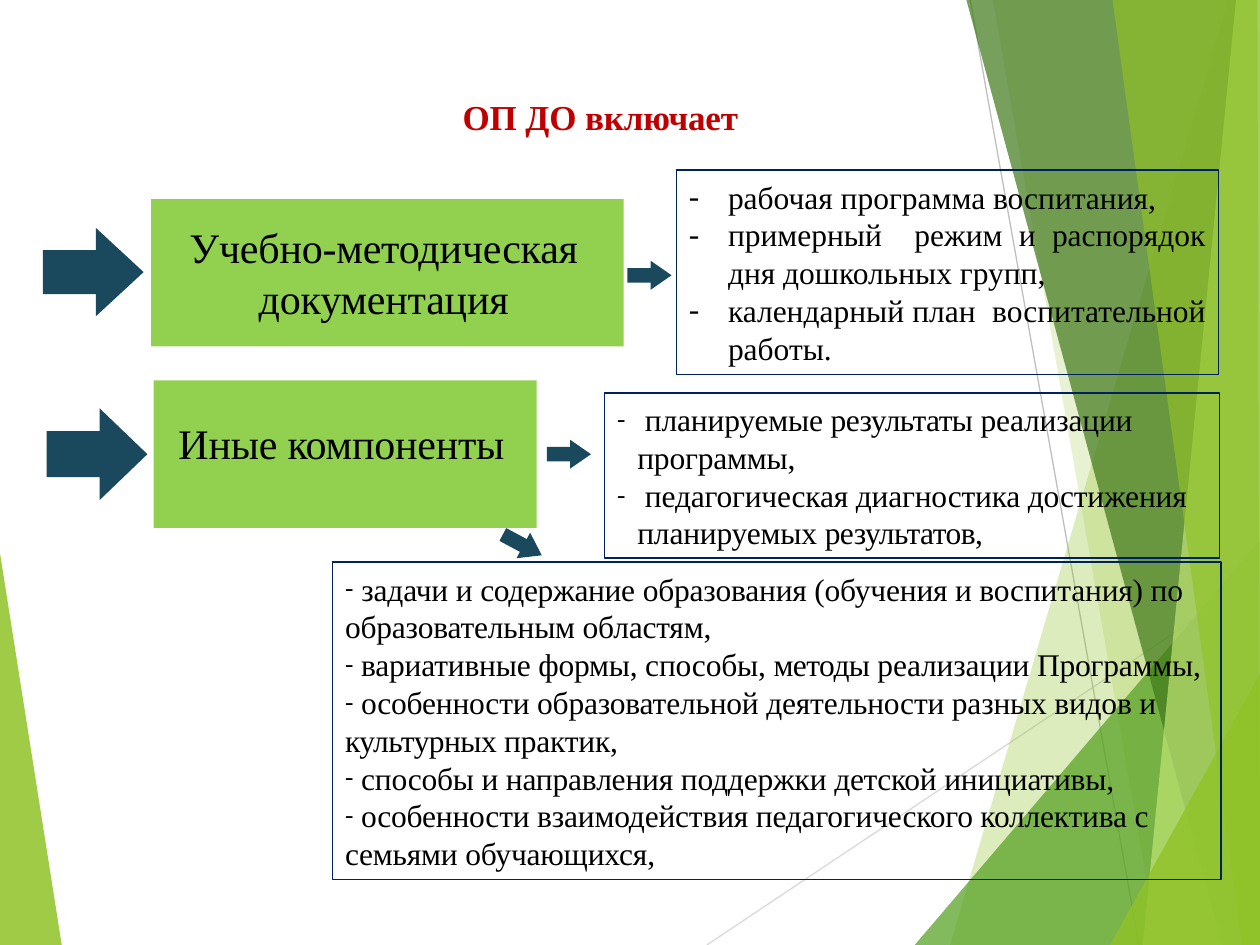
import pptx
import pptx.util
import pptx.dml.color
import pptx.enum.shapes
import pptx.enum.text
from lxml import etree

Inches, Pt = pptx.util.Inches, pptx.util.Pt
RGB = pptx.dml.color.RGBColor
SHAPE = pptx.enum.shapes.MSO_SHAPE
ALIGN = pptx.enum.text.PP_ALIGN
NS = "http://schemas.openxmlformats.org/drawingml/2006/main"

FONT = "Times New Roman"
BLACK = RGB(0, 0, 0)
RED = RGB(0xC0, 0, 0)
NAVY = RGB(0, 0x20, 0x60)
TEAL = RGB(0x1A, 0x49, 0x5D)
BLOCK_GREEN = RGB(0x92, 0xD0, 0x50)
LIME = RGB(0x90, 0xC2, 0x26)
GREEN = RGB(0x54, 0xA0, 0x21)
DARK_GREEN = RGB(0x3F, 0x78, 0x19)
PALE_GREEN = RGB(0xC0, 0xE4, 0x74)
GREY = RGB(0xBF, 0xBF, 0xBF)
LIGHT_GREY = RGB(0xD9, 0xD9, 0xD9)

LEFT_FACET = ([(0, 4.39), (0.49, 7.5), (0, 7.5)], LIME, 85)
THIN_LINES = [((5.61, 7.5), (10, 4.57), LIGHT_GREY), ((7.7, 0), (9.04, 7.5), GREY)]
RIGHT_FACETS = [
    ([(9.75, 0), (7.54, 7.5), (10, 7.5), (10, 0)], LIME, 30),
    ([(7.88, 0), (9.19, 7.5), (10, 7.5), (10, 0)], LIME, 20),
    ([(7.26, 7.5), (10, 4.29), (10, 7.5)], GREEN, 72),
    ([(7.67, 0), (9.7, 7.5), (10, 7.5), (10, 0)], DARK_GREEN, 70),
    ([(9.81, 0), (9.07, 7.5), (10, 7.5), (10, 0)], PALE_GREEN, 70),
    ([(8.83, 0), (9.86, 7.5), (10, 7.5), (9.98, 0)], LIME, 65),
    ([(8.81, 7.5), (10, 5.35), (10, 7.5)], LIME, 80),
]
BLOCKS = [(1.2, 1.58, 3.75, 1.17), (1.22, 3.02, 3.04, 1.17)]
ARROWS = [
    ((0.34, 1.81, 0.8, 0.7), 0.54, 0),
    ((0.37, 3.24, 0.8, 0.73), 0.52, 0),
    ((4.98, 2.07, 0.35, 0.23), 0.72, 0),
    ((4.34, 3.49, 0.35, 0.23), 0.72, 0),
    ((3.97, 4.21, 0.35, 0.23), 0.72, 28.1),
]
LABELS = [
    ((1.73, 0.75, 6.07, 0.35), "ОП ДО включает", 20, RED, True),
    ((1.39, 1.75, 3.31, 0.82), "Учебно-методическая документация", 24, BLACK, False),
    ((1.35, 3.3, 2.72, 0.42), "Иные компоненты", 24, BLACK, False),
]
LISTS = [
    dict(at=(5.37, 1.35, 4.3, 1.62), align=ALIGN.JUSTIFY, margin=0.31, bullet=100, items=[
        [("рабочая программа воспитания, ", 0)],
        [("примерный  режим и распорядок дня дошкольных групп, ", 0)],
        [("календарный план  воспитательной работы. ", 0)],
    ]),
    dict(at=(4.8, 3.12, 4.88, 1.31), align=ALIGN.LEFT, margin=0.16, bullet=80, items=[
        [(" планируемые ", -0.1), ("результаты ", -0.3), ("реализации программы,", -0.1)],
        [(" педагогическая диагностика достижения планируемых ", -0.1), ("результатов,", -0.3)],
    ]),
    dict(at=(2.64, 4.46, 7.05, 2.52), align=ALIGN.LEFT, margin=0, bullet=80, items=[
        [(" ", -0.1), ("з", -0.3), ("адачи и ", -0.1), ("содержание ", -0.2),
         ("образования (обучения и воспитания) по  образовательным областям,", -0.1)],
        [(" вариативные формы, способы, ", -0.1), ("методы ", -0.3),
         ("реализации Программы,", -0.1)],
        [(" особенности образовательной деятельности разных видов и  ", -0.1),
         ("культурных ", -0.3), ("практик,", -0.1)],
        [(" способы и направления поддержки ", -0.1), ("детской ", -0.2), ("инициативы,", -0.1)],
        [(" особенности взаимодействия педагогического коллектива с  семьями обучающихся", -0.1),
         (",", -0.3)],
    ]),
]


def paint(sp, color, opacity=100):
    sp.shadow.inherit = False
    sp.line.fill.background()
    sp.fill.solid()
    sp.fill.fore_color.rgb = color
    if opacity < 100:
        clr = sp.fill._xPr.find(f".//{{{NS}}}srgbClr")
        etree.SubElement(clr, f"{{{NS}}}alpha", val=str(opacity * 1000))


def add_facet(s, points, color, opacity):
    pts = [(Inches(x), Inches(y)) for x, y in points]
    fb = s.shapes.build_freeform(*pts[0])
    fb.add_line_segments(pts[1:], close=True)
    paint(fb.convert_to_shape(), color, opacity)


def add_line(s, start, end, color):
    ends = [Inches(v) for v in start + end]
    ln = s.shapes.add_connector(pptx.enum.shapes.MSO_CONNECTOR.STRAIGHT, *ends)
    ln.line.color.rgb = color
    ln.line.width = Pt(0.75)
    etree.SubElement(ln._element.spPr, f"{{{NS}}}effectLst")


def add_shape(s, kind, at):
    return s.shapes.add_shape(kind, *[Inches(v) for v in at])


def style(r, size, color, bold=False, spacing=0):
    r.font.name = FONT
    r.font.size = Pt(size)
    r.font.bold = bold
    r.font.color.rgb = color
    r._r.get_or_add_rPr().set("spc", str(round(spacing * 100)))


def add_label(s, at, text, size, color, bold):
    tf = s.shapes.add_textbox(*[Inches(v) for v in at]).text_frame
    tf.word_wrap = True
    tf.margin_left = tf.margin_right = tf.margin_bottom = 0
    tf.margin_top = Inches(0.01)
    tf.text = text
    p = tf.paragraphs[0]
    p.alignment = ALIGN.CENTER
    p.space_before = Pt(1)
    style(p.runs[0], size, color, bold, -0.1)


def add_list(s, at, align, margin, bullet, items):
    sp = add_shape(s, SHAPE.RECTANGLE, at)
    sp.shadow.inherit = False
    sp.fill.background()
    sp.line.color.rgb = NAVY
    sp.line.width = Pt(0.75)
    tf = sp.text_frame
    tf.word_wrap = True
    for i, item in enumerate(items):
        p = tf.add_paragraph() if i else tf.paragraphs[0]
        p.alignment = align
        pPr = p._p.get_or_add_pPr()
        pPr.set("marL", str(Inches(margin)))
        pPr.set("indent", str(-Inches(margin)))
        etree.SubElement(pPr, f"{{{NS}}}buSzPct", val=str(bullet * 1000))
        etree.SubElement(pPr, f"{{{NS}}}buFont", typeface=FONT)
        etree.SubElement(pPr, f"{{{NS}}}buChar", char="-")
        for text, spacing in item:
            r = p.add_run()
            r.text = text
            style(r, 18, BLACK, spacing=spacing)


def main():
    prs = pptx.Presentation()
    prs.slide_width, prs.slide_height = Inches(10), Inches(7.5)
    s = prs.slides.add_slide(prs.slide_layouts[6])
    add_facet(s, *LEFT_FACET)
    for line in THIN_LINES:
        add_line(s, *line)
    for facet in RIGHT_FACETS:
        add_facet(s, *facet)
    for at in BLOCKS:
        paint(add_shape(s, SHAPE.RECTANGLE, at), BLOCK_GREEN)
    for at, head, angle in ARROWS:
        sp = add_shape(s, SHAPE.RIGHT_ARROW, at)
        sp.adjustments[0], sp.adjustments[1] = 0.5, head
        sp.rotation = angle
        paint(sp, TEAL)
    for label in LABELS:
        add_label(s, *label)
    for box in LISTS:
        add_list(s, **box)
    prs.save("out.pptx")


if __name__ == "__main__":
    main()
